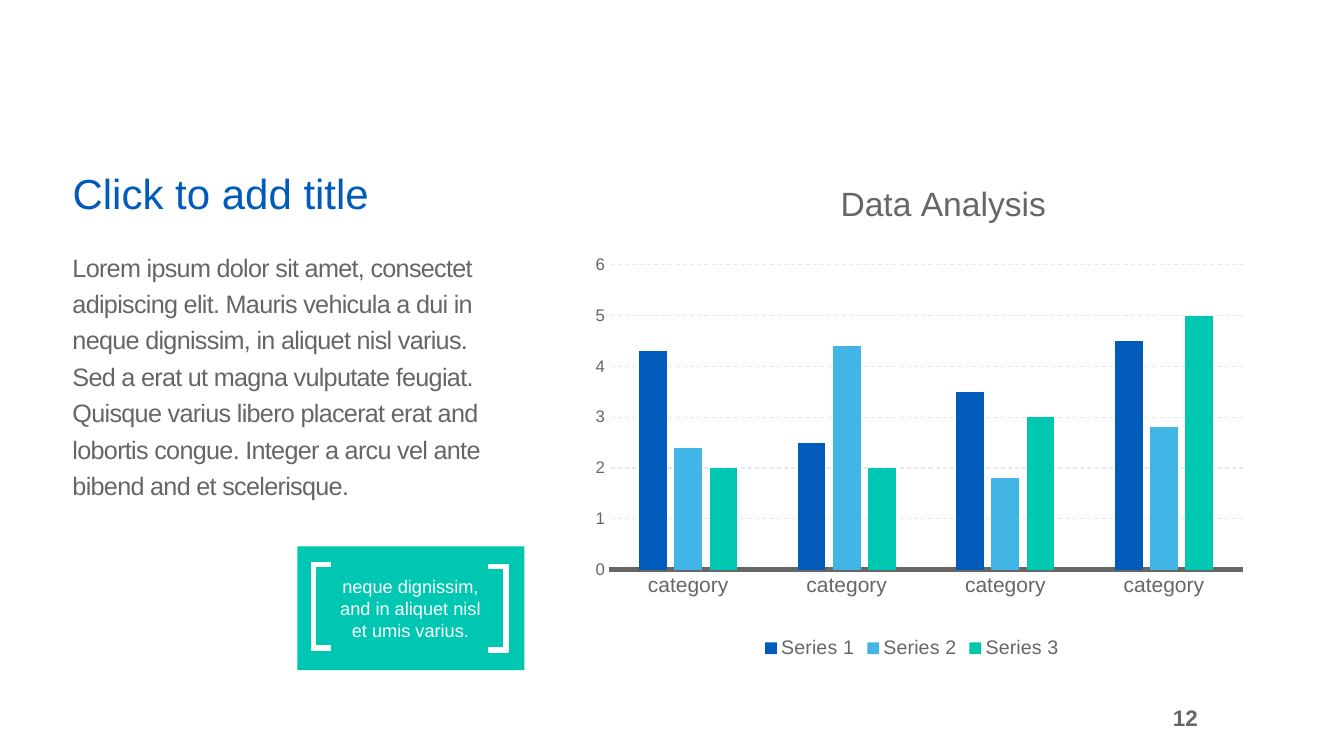
from lxml import etree
from pptx import Presentation
from pptx.chart.data import CategoryChartData
from pptx.dml.color import RGBColor
from pptx.enum.chart import XL_CHART_TYPE, XL_LEGEND_POSITION, XL_TICK_MARK
from pptx.enum.dml import MSO_LINE
from pptx.enum.shapes import MSO_SHAPE
from pptx.enum.text import MSO_ANCHOR, MSO_AUTO_SIZE, PP_ALIGN
from pptx.oxml.ns import qn
from pptx.util import Pt

PX = 9144
FONT = "Arial"
WHITE = RGBColor(0xFF, 0xFF, 0xFF)
GRAY = RGBColor(0x66, 0x66, 0x66)
PALE = RGBColor(0xE8, 0xE8, 0xE8)
BLUE = RGBColor(0x00, 0x5B, 0xBB)
SKY = RGBColor(0x41, 0xB6, 0xE6)
TEAL = RGBColor(0x00, 0xC7, 0xB1)
LEFT, CENTER, RIGHT = PP_ALIGN.LEFT, PP_ALIGN.CENTER, PP_ALIGN.RIGHT
TOP, MIDDLE, BOTTOM = MSO_ANCHOR.TOP, MSO_ANCHOR.MIDDLE, MSO_ANCHOR.BOTTOM
RECT = MSO_SHAPE.RECTANGLE
COLUMN = XL_CHART_TYPE.COLUMN_CLUSTERED
BELOW = XL_LEGEND_POSITION.BOTTOM
NO_TICK = XL_TICK_MARK.NONE
DASH = MSO_LINE.DASH
NO_FIT = MSO_AUTO_SIZE.NONE

SERIES = [
    ("Series 1", (4.3, 2.5, 3.5, 4.5), BLUE),
    ("Series 2", (2.4, 4.4, 1.8, 2.8), SKY),
    ("Series 3", (2, 2, 3, 5), TEAL),
]
BODY = (
    "Lorem ipsum dolor sit amet, consectet adipiscing elit. Mauris vehicula "
    "a dui in neque dignissim, in aliquet nisl varius. Sed a erat ut magna "
    "vulputate feugiat. Quisque varius libero placerat erat and lobortis "
    "congue. Integer a arcu vel ante bibend and et scelerisque."
)


def scale(*sizes):
    """Turn px lengths into EMU."""
    return [size * PX for size in sizes]


def style(font, size, color=GRAY, bold=False):
    """Set the face, size and colour of a font."""
    font.name, font.size, font.bold = FONT, Pt(size), bold
    font.color.rgb = color


def write(shape, text, size, color=GRAY, bold=False, align=LEFT, anchor=TOP,
          lead=None, track=0):
    """Fill a shape with one formatted paragraph."""
    frame = shape.text_frame
    frame.text = text
    frame.word_wrap = True
    frame.auto_size = NO_FIT
    frame.vertical_anchor = anchor
    para = frame.paragraphs[0]
    para.alignment = align
    para.line_spacing = lead
    for run in para.runs:
        style(run.font, size, color, bold)
        if track:
            run._r.get_or_add_rPr().set("spc", str(track))


def arrange(node, index, **parts):
    """Give a chart part a manual layout."""
    for old in node.findall(qn("c:layout")):
        node.remove(old)
    layout = etree.Element(qn("c:layout"))
    manual = etree.SubElement(layout, qn("c:manualLayout"))
    for name, value in parts.items():
        etree.SubElement(manual, qn("c:" + name)).set("val", str(value))
    node.insert(index, layout)


def add_copy(slide, x, y, w):
    """Place the title and the body text below it."""
    title = slide.shapes.title
    title.left, title.top, title.width, title.height = scale(x, y, w, 78)
    write(title, "Click to add title", 30, BLUE, anchor=BOTTOM, lead=0.9)
    body = slide.shapes.add_textbox(*scale(x, y + 95, 438, 303))
    write(body, BODY, 18, lead=Pt(26), track=-50)


def add_bracket(slide, x, y, side):
    """Draw a square bracket whose arms point to the given side."""
    arm, bar, tall = 19 * side, 4 * side, 87
    pen = slide.shapes.build_freeform(x + arm, y, scale=PX)
    pen.add_line_segments([
        (x, y), (x, y + tall), (x + arm, y + tall), (x + arm, y + tall - 4),
        (x + bar, y + tall - 4), (x + bar, y + 4), (x + arm, y + 4),
    ])
    shape = pen.convert_to_shape()
    shape.shadow.inherit = False
    shape.fill.solid()
    shape.fill.fore_color.rgb = WHITE
    shape.line.color.rgb = WHITE
    shape.line.width = Pt(1)


def add_callout(slide, x, y, w, h):
    """Place the teal box with its bracketed quote."""
    box = slide.shapes.add_shape(RECT, *scale(x, y, w, h))
    box.shadow.inherit = False
    box.fill.solid()
    box.fill.fore_color.rgb = TEAL
    box.line.fill.background()
    add_bracket(slide, x + 14, y + 16, 1)
    add_bracket(slide, x + w - 16, y + 18, -1)
    quote = slide.shapes.add_textbox(*scale(x + 26, y + 24, 172, 76))
    write(quote, "neque dignissim, and in aliquet nisl\vet umis varius.",
          13, WHITE, align=CENTER)


def add_graph(slide, x, y, w, h):
    """Place the column chart with its title and legend."""
    data = CategoryChartData()
    data.categories = ["category"] * 4
    for name, values, _ in SERIES:
        data.add_series(name, values)
    chart = slide.shapes.add_chart(COLUMN, *scale(x, y, w, h), data).chart
    style(chart.font, 10)
    chart.has_title = True
    head = chart.chart_title.text_frame
    head.text = "Data Analysis"
    style(head.paragraphs[0].runs[0].font, 24)
    chart.chart_title.include_in_layout = False
    chart.has_legend = True
    chart.legend.position = BELOW
    chart.legend.include_in_layout = False
    style(chart.legend.font, 14)

    plot = chart.plots[0]
    plot.gap_width, plot.overlap = 219, -27
    plot.vary_by_categories = False
    for series, (_, _, color) in zip(plot.series, SERIES):
        series.format.fill.solid()
        series.format.fill.fore_color.rgb = color

    base, rise = chart.category_axis, chart.value_axis
    for axis, size in ((base, 15), (rise, 12)):
        axis.major_tick_mark = axis.minor_tick_mark = NO_TICK
        style(axis.tick_labels.font, size)
    base.format.line.color.rgb = GRAY
    base.format.line.width = Pt(3.25)
    rise.minimum_scale, rise.maximum_scale, rise.major_unit = 0, 6, 1
    rise.format.line.fill.background()
    grid = rise.major_gridlines.format.line
    grid.color.rgb = PALE
    grid.width = Pt(0.75)
    grid.dash_style = DASH

    title, area = chart.element.xpath("c:chart/c:title | c:chart/c:plotArea")
    arrange(title, 1, xMode="edge", yMode="edge", x=0.39, y=0.01)
    arrange(area, 0, layoutTarget="inner", xMode="edge", yMode="edge",
            x=0.07, y=0.19, w=0.9, h=0.62)


def add_number(slide, x, y, w, h):
    """Place the page number."""
    box = slide.shapes.add_textbox(*scale(x, y, w, h))
    frame = box.text_frame
    frame.margin_left, frame.margin_right = scale(13, 13)
    frame.margin_top, frame.margin_bottom = scale(7, 7)
    write(box, "12", 16, bold=True, align=RIGHT, anchor=MIDDLE)


def main():
    """Build the slide and save it."""
    deck = Presentation()
    deck.slide_width, deck.slide_height = scale(1333, 750)
    slide = deck.slides.add_slide(deck.slide_layouts[5])
    add_number(slide, 1122, 683, 79, 58)
    add_graph(slide, 555, 170, 699, 488)
    add_copy(slide, 62, 144, 467)
    add_callout(slide, 295, 542, 225, 123)
    deck.save("out.pptx")


if __name__ == "__main__":
    main()
